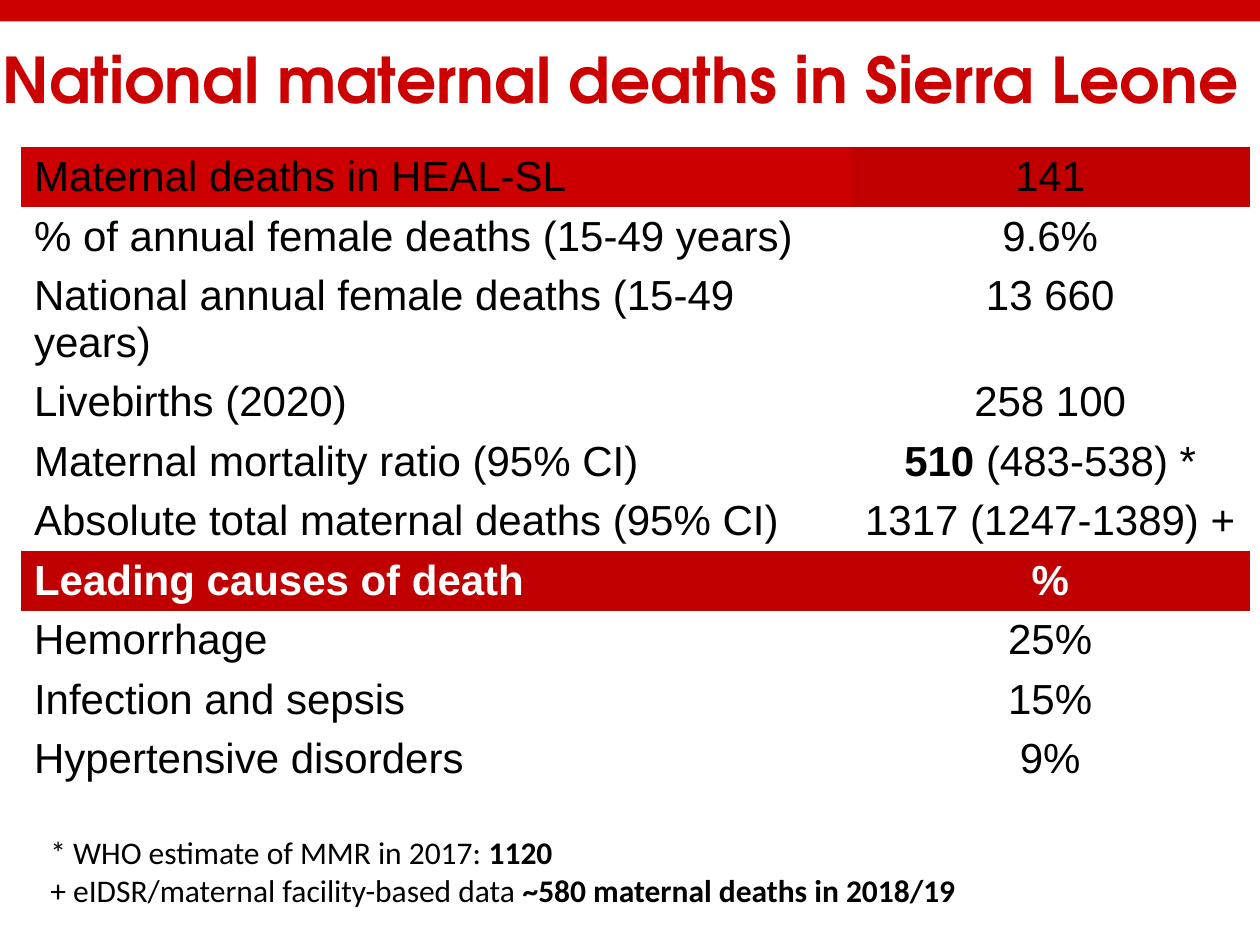
import dataclasses

import pptx
import pptx.dml.color
import pptx.enum.shapes
import pptx.enum.text
import pptx.oxml.ns
import pptx.util

Inches = pptx.util.Inches
RGB = pptx.dml.color.RGBColor.from_string
ALIGN = pptx.enum.text.PP_ALIGN
ANCHOR = pptx.enum.text.MSO_ANCHOR


@dataclasses.dataclass(frozen=True)
class Theme:
    """Colours, fonts and type sizes of the slide."""
    red: str = "CC0000"
    dark_red: str = "C00000"
    black: str = "000000"
    white: str = "FFFFFF"
    title_font: str = "TeX Gyre Adventor"
    table_font: str = "Arial"
    note_font: str = "Calibri"
    title_size: int = 36
    table_size: int = 24
    note_size: int = 18
    plain_table: str = "{2D5ABB26-0587-4C30-8999-92F81FD0307C}"


THEME = Theme()

ROWS = [
    ("Maternal deaths in HEAL-SL", "141"),
    ("% of annual female deaths (15-49 years)", "9.6%"),
    ("National annual female deaths (15-49 years)", "13 660"),
    ("Livebirths (2020)", "258 100"),
    ("Maternal mortality ratio (95% CI)", [("510", True), (" (483-538) *", False)]),
    ("Absolute total maternal deaths (95% CI)", "1317 (1247-1389) +"),
    ("Leading causes of death", "%"),
    ("Hemorrhage", "25%"),
    ("Infection and sepsis", "15%"),
    ("Hypertensive disorders", "9%"),
]
CAUSES_ROW = 6
FILLS = {0: (THEME.red, THEME.dark_red), CAUSES_ROW: (THEME.dark_red, THEME.dark_red)}

NOTES = [
    [("* WHO estimate of MMR in 2017: ", False), ("1120", True)],
    [("+ eIDSR/maternal facility-based data ", False),
     ("~580 maternal deaths in 2018/19", True)],
]


def add_runs(p, runs, font, size, color):
    """Add (text, bold) runs to a paragraph."""
    for text, bold in runs:
        r = p.add_run()
        r.text = text
        r.font.name = font
        r.font.size = pptx.util.Pt(size)
        r.font.bold = bold
        r.font.color.rgb = RGB(color)


def add_top_band(s, x, y, w, h):
    """Draw the red band along the top edge."""
    sp = s.shapes.add_shape(pptx.enum.shapes.MSO_SHAPE.RECTANGLE,
                            Inches(x), Inches(y), Inches(w), Inches(h))
    sp.shadow.inherit = False
    sp.fill.solid()
    sp.fill.fore_color.rgb = RGB(THEME.red)
    sp.line.fill.background()


def set_title(s, x, y, w, h):
    """Place and fill the title placeholder."""
    sp = s.shapes.title
    sp.left, sp.top, sp.width, sp.height = map(Inches, (x, y, w, h))
    tf = sp.text_frame
    tf.auto_size = pptx.enum.text.MSO_AUTO_SIZE.NONE
    tf.vertical_anchor = ANCHOR.MIDDLE
    p = tf.paragraphs[0]
    p.alignment = ALIGN.JUSTIFY
    add_runs(p, [("National maternal deaths in Sierra Leone", True)],
             THEME.title_font, THEME.title_size, THEME.red)


def add_deaths_table(s, x, y, widths, row_height):
    """Add the table of maternal deaths and their causes."""
    frame = s.shapes.add_table(len(ROWS), len(widths), Inches(x), Inches(y),
                               Inches(sum(widths)), Inches(row_height * len(ROWS)))
    table = frame.table
    table.first_row = table.horz_banding = False
    for style in frame.element.iter(pptx.oxml.ns.qn("a:tableStyleId")):
        style.text = THEME.plain_table
    for column, width in zip(table.columns, widths):
        column.width = Inches(width)
    for i, row in enumerate(ROWS):
        heading = i == CAUSES_ROW
        color = THEME.white if heading else THEME.black
        for j, content in enumerate(row):
            cell = table.cell(i, j)
            if i in FILLS:
                cell.fill.solid()
                cell.fill.fore_color.rgb = RGB(FILLS[i][j])
            else:
                cell.fill.background()
            p = cell.text_frame.paragraphs[0]
            p.alignment = ALIGN.CENTER if j else ALIGN.LEFT
            runs = [(content, heading)] if isinstance(content, str) else content
            add_runs(p, runs, THEME.table_font, THEME.table_size, color)


def add_notes(s, x, y, w, h):
    """Add the footnotes below the table."""
    tf = s.shapes.add_textbox(Inches(x), Inches(y), Inches(w), Inches(h)).text_frame
    tf.word_wrap = True
    tf.auto_size = pptx.enum.text.MSO_AUTO_SIZE.SHAPE_TO_FIT_TEXT
    tf.margin_left = tf.margin_right = Inches(0.07)
    tf.margin_top = tf.margin_bottom = Inches(0.04)
    for i, runs in enumerate(NOTES):
        p = tf.add_paragraph() if i else tf.paragraphs[0]
        add_runs(p, runs, THEME.note_font, THEME.note_size, THEME.black)


def main():
    """Build and save the slide."""
    prs = pptx.Presentation()
    prs.slide_width, prs.slide_height = Inches(10), Inches(7.5)
    s = prs.slides.add_slide(prs.slide_layouts.get_by_name("Title Only"))
    add_top_band(s, 0, 0, 10, 0.17)
    set_title(s, -0.08, 0, 10.08, 1.25)
    add_deaths_table(s, 0.17, 1.17, (6.58, 3.17), 0.41)
    add_notes(s, 0.33, 6.57, 9.33, 0.68)
    prs.save("out.pptx")


if __name__ == "__main__":
    main()
